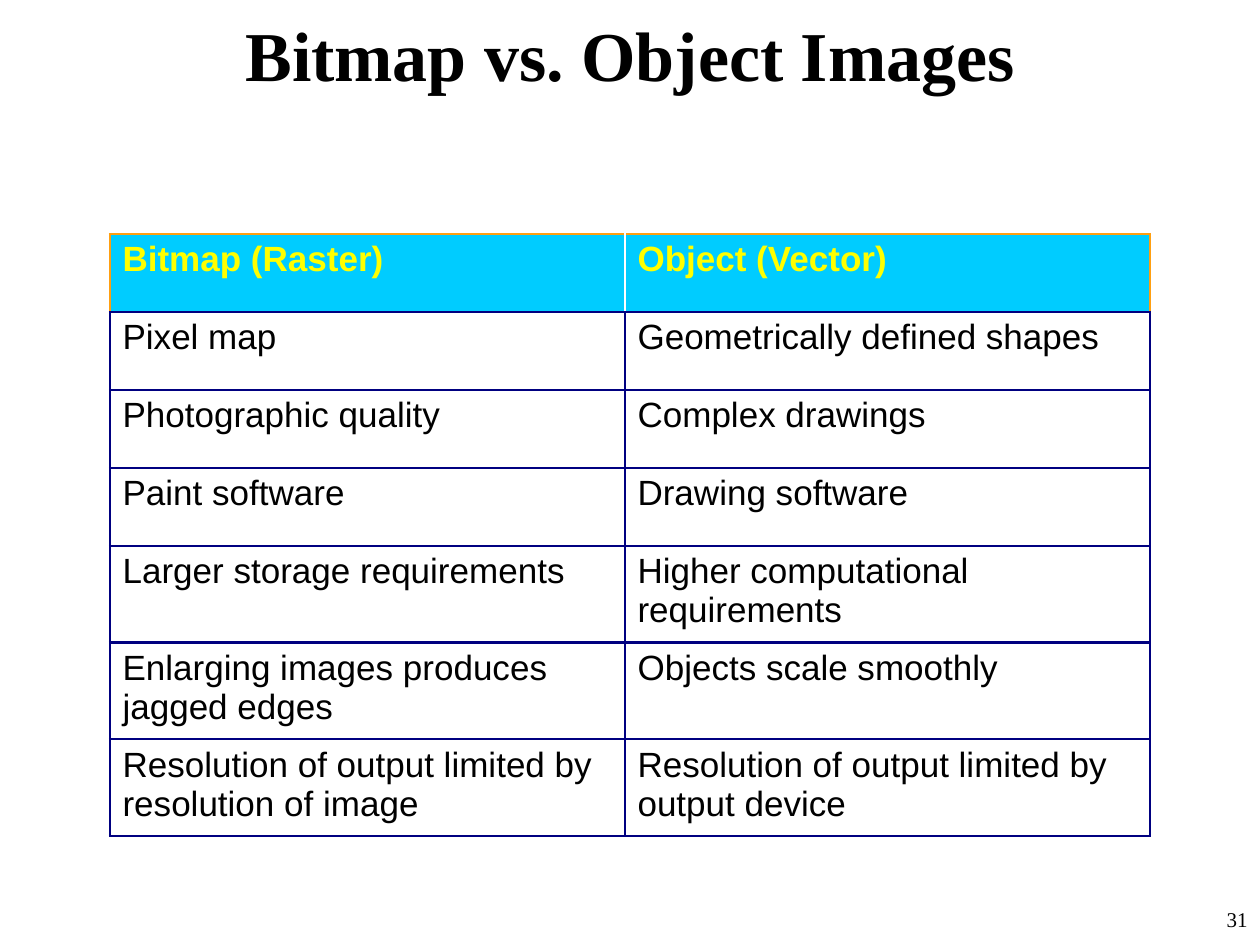
from dataclasses import dataclass

from lxml import etree
from pptx import Presentation
from pptx.dml.color import RGBColor
from pptx.enum.text import MSO_ANCHOR, MSO_AUTO_SIZE, PP_ALIGN
from pptx.oxml.ns import qn
from pptx.util import Emu, Pt

LEFT, CENTER, RIGHT = PP_ALIGN.LEFT, PP_ALIGN.CENTER, PP_ALIGN.RIGHT
TOP, MIDDLE = MSO_ANCHOR.TOP, MSO_ANCHOR.MIDDLE
NO_AUTOFIT = MSO_AUTO_SIZE.NONE
TITLE_ONLY = 5
PX_PER_INCH = 126


@dataclass(frozen=True)
class Theme:
    serif: str = "Times New Roman"
    sans: str = "Arial"
    title_size: int = 40
    cell_size: int = 20
    number_size: int = 12
    border_width: float = 1.5
    text: str = "000000"
    header_text: str = "FFFF00"
    header_fill: str = "00CCFF"
    header_edge: str = "FF9F11"
    header_divider: str = "FFFFFF"
    grid: str = "000080"


THEME = Theme()

ROWS = [
    ("Bitmap (Raster)", "Object (Vector)"),
    ("Pixel map", "Geometrically defined shapes"),
    ("Photographic quality", "Complex drawings"),
    ("Paint software", "Drawing software"),
    ("Larger storage requirements", "Higher computational requirements"),
    ("Enlarging images produces jagged edges", "Objects scale smoothly"),
    ("Resolution of output limited by resolution of image",
     "Resolution of output limited by output device"),
]


def px(n):
    return Emu(round(n * 914400 / PX_PER_INCH))


def write(tf, text, font, size, color, bold=False, align=LEFT):
    p = tf.paragraphs[0]
    p.text = text
    p.alignment = align
    p.font.name = font
    p.font.size = Pt(size)
    p.font.bold = bold
    p.font.color.rgb = RGBColor.from_string(color)


def set_borders(cell, colors):
    tcPr = cell._tc.get_or_add_tcPr()
    for i, (side, color) in enumerate(zip("LRTB", colors)):
        ln = etree.Element(qn(f"a:ln{side}"), w=str(Pt(THEME.border_width)))
        fill = etree.SubElement(ln, qn("a:solidFill"))
        etree.SubElement(fill, qn("a:srgbClr"), val=color)
        tcPr.insert(i, ln)


def add_title(s, box, text):
    sp = s.shapes.title
    sp.left, sp.top, sp.width, sp.height = map(px, box)
    tf = sp.text_frame
    tf.auto_size = NO_AUTOFIT
    tf.vertical_anchor = MIDDLE
    write(tf, text, THEME.serif, THEME.title_size, THEME.text, True, CENTER)


def add_comparison(s, box, widths, rows):
    table = s.shapes.add_table(len(rows), len(widths), *map(px, box)).table
    table.horz_banding = False
    for column, width in zip(table.columns, widths):
        column.width = px(width)
    last = len(widths) - 1
    for i, row in enumerate(rows):
        header = i == 0
        for j, text in enumerate(row):
            cell = table.cell(i, j)
            cell.vertical_anchor = TOP
            if header:
                cell.fill.solid()
                cell.fill.fore_color.rgb = RGBColor.from_string(THEME.header_fill)
                edge, divider = THEME.header_edge, THEME.header_divider
                borders = (edge if j == 0 else divider,
                           edge if j == last else divider, edge, THEME.grid)
            else:
                cell.fill.background()
                borders = (THEME.grid,) * 4
            set_borders(cell, borders)
            color = THEME.header_text if header else THEME.text
            write(cell.text_frame, text, THEME.sans, THEME.cell_size, color, header)


def add_number(s, box, text):
    tf = s.shapes.add_textbox(*map(px, box)).text_frame
    tf.word_wrap = True
    write(tf, text, THEME.serif, THEME.number_size, THEME.text, align=RIGHT)


def main():
    prs = Presentation()
    prs.slide_width, prs.slide_height = px(1260), px(945)
    s = prs.slides.add_slide(prs.slide_layouts[TITLE_ONLY])
    add_title(s, (0, 0, 1260, 106), "Bitmap vs. Object Images")
    add_number(s, (998, 900, 262, 45), "31")
    widths = (515, 525)
    add_comparison(s, (110, 234, sum(widths), 78 * len(ROWS)), widths, ROWS)
    prs.save("out.pptx")


if __name__ == "__main__":
    main()
